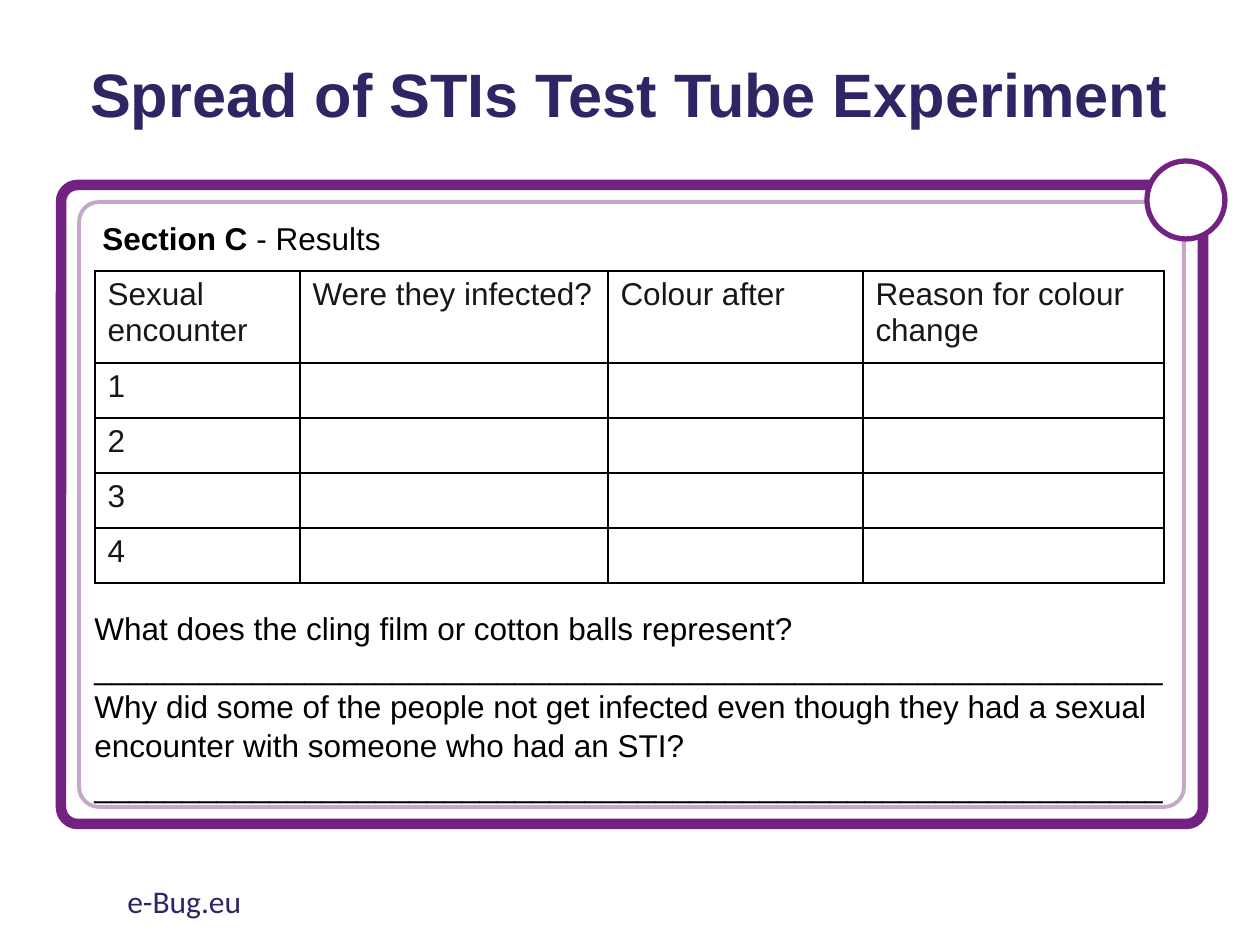
import pptx
import pptx.util
import pptx.dml.color
import pptx.enum.shapes
import pptx.enum.text
import pptx.oxml
import pptx.oxml.ns
import lxml.etree as etree

PX = 914400 / 126
PURPLE, NAVY, BLACK, INK, WHITE = "732281", "302564", "000000", "181717", "FFFFFF"
SHAPE = pptx.enum.shapes.MSO_SHAPE
ALIGN = pptx.enum.text.PP_ALIGN
ANCHOR = pptx.enum.text.MSO_ANCHOR

TITLE = "Spread of STIs Test Tube Experiment"
SECTION = [("Section C ", True), ("- Results", False)]
HEADERS = ["Sexual encounter", "Were they infected?", "Colour after", "Reason for colour change"]
ENCOUNTERS = ["1", "2", "3", "4"]
ANSWER_LINE = "_" * 61
QUESTIONS = [
    "What does the cling film or cotton balls represent?",
    ANSWER_LINE,
    "Why did some of the people not get infected even though they had a sexual",
    "encounter with someone who had an STI? " + ANSWER_LINE,
]
FOOTER = "e-Bug.eu"

TABLE_AT = (95, 271)
COL_WIDTHS = [205, 308, 255, 301]
HEADER_HEIGHT, ROW_HEIGHT = 92, 55


def emu(px):
    return pptx.util.Emu(round(px * PX))


def rgb(color):
    return pptx.dml.color.RGBColor.from_string(color)


def write(tf, text, size=18, font="Arial", color=BLACK, bold=False,
          align=None, spacing=None, new=False):
    p = tf.add_paragraph() if new else tf.paragraphs[0]
    p.alignment = align
    p.line_spacing = spacing
    for part, heavy in [(text, bold)] if isinstance(text, str) else text:
        r = p.add_run()
        r.text = part
        r.font.size = pptx.util.Pt(size)
        r.font.name = font
        r.font.bold = heavy
        r.font.color.rgb = rgb(color)


def text_box(s, x, y, w, h, anchor=ANCHOR.TOP):
    tf = s.shapes.add_textbox(*map(emu, (x, y, w, h))).text_frame
    tf.word_wrap = True
    tf.vertical_anchor = anchor
    return tf


def outline(s, kind, x, y, w, h, width, fill=None, radius=None, alpha=None):
    sp = s.shapes.add_shape(kind, *map(emu, (x, y, w, h)))
    sp.shadow.inherit = False
    if fill:
        sp.fill.solid()
        sp.fill.fore_color.rgb = rgb(fill)
    else:
        sp.fill.background()
    sp.line.color.rgb = rgb(PURPLE)
    sp.line.width = pptx.util.Pt(width)
    if radius:
        sp.adjustments[0] = radius
    if alpha:
        clr = sp.line._ln.find(".//" + pptx.oxml.ns.qn("a:srgbClr"))
        etree.SubElement(clr, pptx.oxml.ns.qn("a:alpha"), val=str(alpha * 1000))


def border(cell, color=BLACK, width=1):
    tc_pr = cell._tc.get_or_add_tcPr()
    for i, side in enumerate("LRTB"):
        tc_pr.insert(i, pptx.oxml.parse_xml(
            f'<a:ln{side} {pptx.oxml.ns.nsdecls("a")} w="{width * 12700}">'
            f'<a:solidFill><a:srgbClr val="{color}"/></a:solidFill></a:ln{side}>'))


def results_table(s):
    rows = [HEADERS] + [[n] + [""] * (len(HEADERS) - 1) for n in ENCOUNTERS]
    heights = [HEADER_HEIGHT] + [ROW_HEIGHT] * len(ENCOUNTERS)
    size = (sum(COL_WIDTHS), sum(heights))
    table = s.shapes.add_table(len(rows), len(HEADERS), *map(emu, TABLE_AT + size)).table
    table.first_row = table.horz_banding = False
    for column, w in zip(table.columns, COL_WIDTHS):
        column.width = emu(w)
    for i, (row, h) in enumerate(zip(rows, heights)):
        table.rows[i].height = emu(h)
        for j, text in enumerate(row):
            cell = table.cell(i, j)
            cell.fill.background()
            border(cell)
            if text:
                write(cell.text_frame, text, color=INK)


def main():
    prs = pptx.Presentation()
    prs.slide_width, prs.slide_height = emu(1260), emu(945)
    s = prs.slides.add_slide(prs.slide_layouts[6])

    write(text_box(s, 60, 34, 1138, 127, ANCHOR.MIDDLE), TITLE, size=35,
          color=NAVY, bold=True, align=ALIGN.CENTER, spacing=0.9)
    outline(s, SHAPE.ROUNDED_RECTANGLE, 79, 202, 1105, 605, 2.25, radius=0.033, alpha=40)
    outline(s, SHAPE.ROUNDED_RECTANGLE, 61, 185, 1142, 639, 6, radius=0.026)
    outline(s, SHAPE.OVAL, 1147, 161, 78, 78, 3, fill=WHITE)
    write(text_box(s, 90, 213, 779, 50), SECTION)
    results_table(s)
    tf = text_box(s, 82, 601, 1096, 204)
    for i, question in enumerate(QUESTIONS):
        write(tf, question, spacing=1.04, new=i > 0)
    write(text_box(s, 115, 876, 426, 50), FOOTER, font="Calibri", color=NAVY)

    prs.save("out.pptx")


if __name__ == "__main__":
    main()
